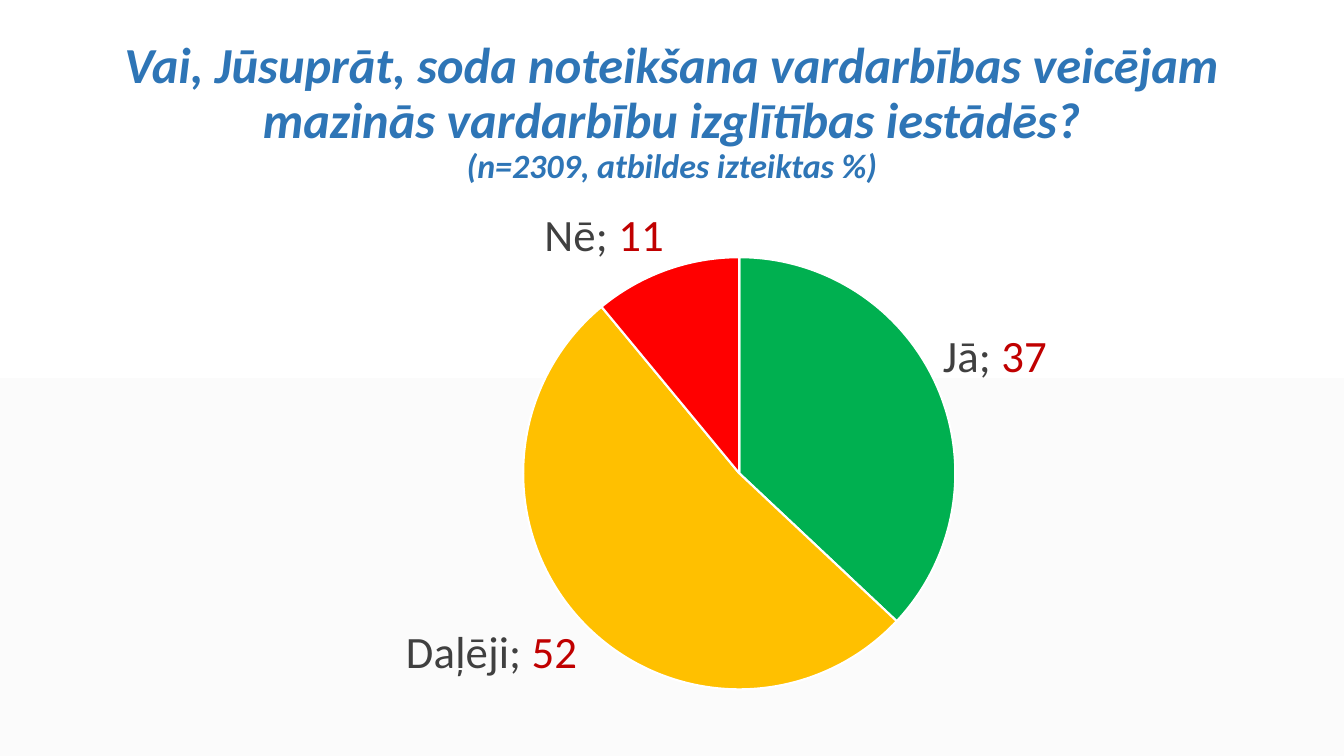
from lxml import etree
from pptx import Presentation
from pptx.chart.data import CategoryChartData
from pptx.dml.color import RGBColor
from pptx.enum.chart import XL_CHART_TYPE, XL_LABEL_POSITION
from pptx.enum.text import MSO_ANCHOR, PP_ALIGN
from pptx.oxml.ns import qn
from pptx.util import Cm, Pt

FONT = "Calibri"
BLUE = RGBColor(0x2E, 0x75, 0xB6)
GREEN = RGBColor(0x00, 0xB0, 0x50)
AMBER = RGBColor(0xFF, 0xC0, 0x00)
RED = RGBColor(0xFF, 0x00, 0x00)
DARK_RED = RGBColor(0xC0, 0x00, 0x00)
GREY = RGBColor(0x40, 0x40, 0x40)
WHITE = RGBColor(0xFF, 0xFF, 0xFF)
PALE_GREY = RGBColor(0xFB, 0xFB, 0xFB)


def add_text(paragraph, text, size, color, bold=False, italic=False):
    run = paragraph.add_run()
    run.text = text
    run.font.name = FONT
    run.font.size = Pt(size)
    run.font.color.rgb = color
    run.font.bold = bold
    run.font.italic = italic


presentation = Presentation()
presentation.slide_width = Cm(33.87)
presentation.slide_height = Cm(19.05)
slide = presentation.slides.add_slide(presentation.slide_layouts[6])

background = slide.background.fill
background.gradient()
background.gradient_angle = 270
for stop, color in zip(background.gradient_stops, (WHITE, PALE_GREY)):
    stop.color.rgb = color

title = slide.shapes.add_textbox(Cm(2.33), Cm(1.01), Cm(29.21), Cm(3.68))
title.text_frame.word_wrap = True
title.text_frame.vertical_anchor = MSO_ANCHOR.MIDDLE
paragraph = title.text_frame.paragraphs[0]
paragraph.alignment = PP_ALIGN.CENTER
paragraph.line_spacing = 0.9
add_text(
    paragraph,
    "Vai, Jūsuprāt, soda noteikšana vardarbības veicējam mazinās vardarbību izglītības iestādēs?",
    size=36, color=BLUE, bold=True, italic=True,
)
paragraph.add_line_break()
add_text(paragraph, "(n=2309, atbildes izteiktas %)", size=24.3, color=BLUE, bold=True, italic=True)

answers = [("Jā", 37, GREEN), ("Daļēji", 52, AMBER), ("Nē", 11, RED)]
chart_data = CategoryChartData()
chart_data.categories = [answer for answer, value, color in answers]
chart_data.add_series("Series 1", [value for answer, value, color in answers])
chart = slide.shapes.add_chart(
    XL_CHART_TYPE.PIE, Cm(2.9), Cm(4.7), Cm(30.25), Cm(13.64), chart_data
).chart
chart.has_title = False
chart.has_legend = False
chart.font.name = FONT
chart.font.size = Pt(10)

plot = chart.plots[0]
plot.vary_by_categories = True
plot.has_data_labels = True
labels = plot.data_labels
labels.show_category_name = True
labels.show_value = True
labels.show_percentage = False
labels.position = XL_LABEL_POSITION.OUTSIDE_END
labels.font.name = FONT
labels.font.size = Pt(32)
labels.font.color.rgb = GREY

for index, (answer, value, color) in enumerate(answers):
    point = plot.series[0].points[index]
    point.format.fill.solid()
    point.format.fill.fore_color.rgb = color
    point.format.line.color.rgb = WHITE
    point.format.line.width = Pt(1.5)
    label = point.data_label
    paragraph = label.text_frame.paragraphs[0]
    add_text(paragraph, f"{answer}; ", size=32, color=GREY)
    add_text(paragraph, str(value), size=32, color=DARK_RED)
    label.position = XL_LABEL_POSITION.OUTSIDE_END

plot_area = chart.element.find(".//" + qn("c:plotArea"))
layout = plot_area.find(qn("c:layout"))
if layout is None:
    layout = etree.Element(qn("c:layout"))
    plot_area.insert(0, layout)
manual_layout = etree.SubElement(layout, qn("c:manualLayout"))
for name, setting in [
    ("layoutTarget", "inner"), ("xMode", "edge"), ("yMode", "edge"),
    ("x", "0.34"), ("y", "0.13"), ("w", "0.36"), ("h", "0.8"),
]:
    etree.SubElement(manual_layout, qn(f"c:{name}")).set("val", setting)

presentation.save("out.pptx")
